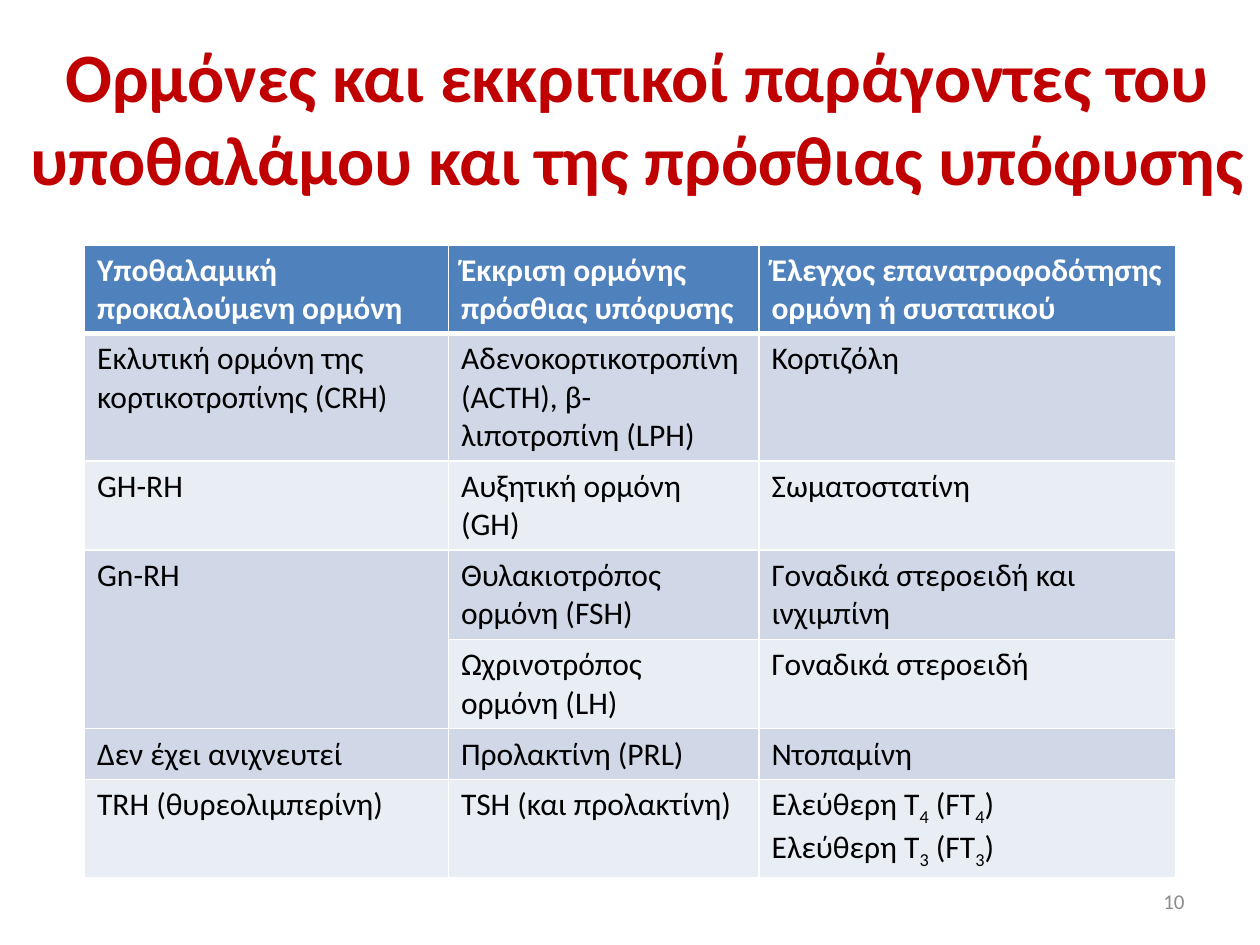
from pptx import Presentation
from pptx.util import Pt
from pptx.dml.color import RGBColor
from pptx.enum.text import PP_ALIGN as Align, MSO_ANCHOR as Anchor
from pptx.oxml import parse_xml
from pptx.oxml.ns import nsdecls

WHITE, BLACK, RED, GREY = "FFFFFF", "000000", "C00000", "8C8C8C"
HEAD, BANDS = "4F81BD", ("D0D8E8", "E9EDF4")

COLS = (208, 177.5, 238)
HEIGHTS = (50, 73, 51, 51, 51, 29, 56)
# An underscore lowers the digit after it
ROWS = (
    ("Υποθαλαμική προκαλούμενη ορμόνη", "Έκκριση ορμόνης πρόσθιας υπόφυσης",
     "Έλεγχος επανατροφοδότησης ορμόνη ή συστατικού"),
    ("Eκλυτική ορμόνη της κορτικοτροπίνης (CRH)",
     "Αδενοκορτικοτροπίνη (ACTH), β-λιποτροπίνη (LPH)", "Κορτιζόλη"),
    ("GH-RH", "Αυξητική ορμόνη (GH)", "Σωματοστατίνη"),
    ("Gn-RH", "Θυλακιοτρόπος ορμόνη (FSH)", "Γοναδικά στεροειδή και ινχιμπίνη"),
    ("", "Ωχρινοτρόπος ορμόνη (LH)", "Γοναδικά στεροειδή"),
    ("Δεν έχει ανιχνευτεί", "Προλακτίνη (PRL)", "Ντοπαμίνη"),
    ("TRH (θυρεολιμπερίνη)", "TSH (και προλακτίνη)",
     "Ελεύθερη Τ_4 (FT_4)\nΕλεύθερη Τ_3 (FT_3)"),
)


def color(code):
    return RGBColor.from_string(code)


def write(frame, text, size=18, fill=BLACK, bold=False, align=Align.LEFT):
    frame.word_wrap = True
    for i, line in enumerate(text.split("\n")):
        para = frame.paragraphs[0] if i == 0 else frame.add_paragraph()
        para.alignment = align
        first, *rest = line.split("_")
        parts = [(first, False)]
        for part in rest:
            parts += [(part[0], True), (part[1:], False)]
        for words, low in parts:
            if not words:
                continue
            run = para.add_run()
            run.text = words
            font = run.font
            font.name, font.size, font.bold = "Calibri", Pt(size), bold
            font.color.rgb = color(fill)
            if low:
                font._element.set("baseline", "-25000")


def label(slide, box, text, **style):
    shape = slide.shapes.add_textbox(*map(Pt, box))
    shape.text_frame.vertical_anchor = Anchor.MIDDLE
    write(shape.text_frame, text, **style)


def edge(cell, base):
    props = cell._tc.get_or_add_tcPr()
    # Borders come before the fill in the cell properties
    for i, side in enumerate("LRTB"):
        width = Pt(base if side == "B" else 1)
        props.insert(i, parse_xml(
            f'<a:ln{side} {nsdecls("a")} w="{width}"><a:solidFill>'
            f'<a:srgbClr val="{WHITE}"/></a:solidFill></a:ln{side}>'))


def grid(slide, left, top):
    box = (left, top, sum(COLS), sum(HEIGHTS))
    table = slide.shapes.add_table(len(ROWS), len(COLS), *map(Pt, box)).table
    for col, width in zip(table.columns, COLS):
        col.width = Pt(width)
    for r, (row, height) in enumerate(zip(ROWS, HEIGHTS)):
        table.rows[r].height = Pt(height)
        head = r == 0
        for c, text in enumerate(row):
            cell = table.cell(r, c)
            cell.fill.solid()
            cell.fill.fore_color.rgb = color(HEAD if head else BANDS[(r - 1) % 2])
            edge(cell, 3 if head else 1)
            write(cell.text_frame, text, fill=WHITE if head else BLACK, bold=head)
    # Gn-RH controls both FSH and LH
    table.cell(3, 0).merge(table.cell(4, 0))


def main():
    deck = Presentation()
    deck.slide_width, deck.slide_height = Pt(720), Pt(540)
    slide = deck.slides.add_slide(deck.slide_layouts[6])

    # Title
    label(slide, (0, 21.6, 728.6, 90),
          "Ορμόνες και εκκριτικοί παράγοντες του υποθαλάμου και της πρόσθιας υπόφυσης",
          size=39.6, fill=RED, bold=True, align=Align.CENTER)
    # Hormone table
    grid(slide, 48.3, 140)
    # Slide number
    label(slide, (516, 500.5, 168, 28.75), "10", size=12, fill=GREY, align=Align.RIGHT)

    deck.save("out.pptx")


if __name__ == "__main__":
    main()
